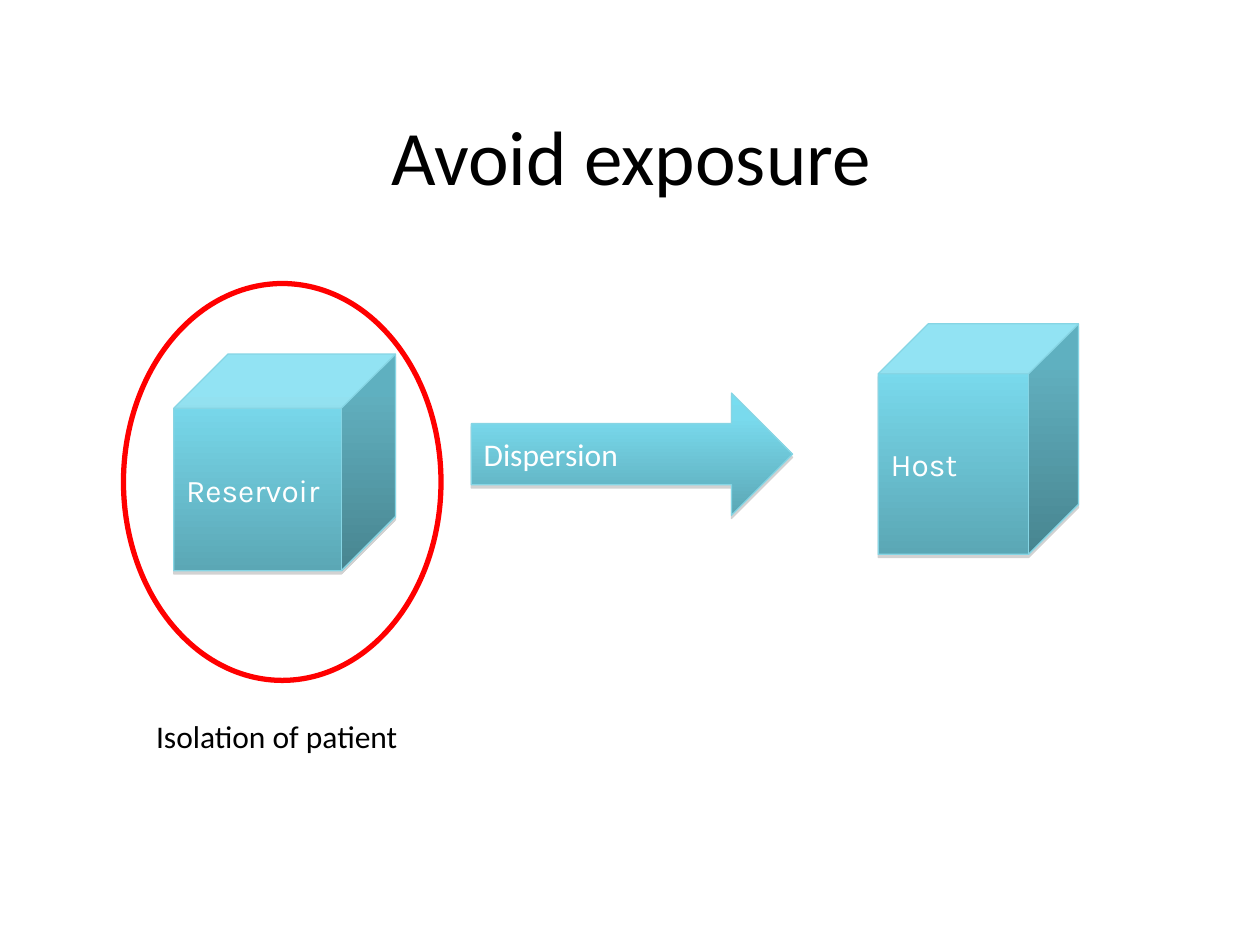
from copy import deepcopy

from lxml import etree
from pptx import Presentation
from pptx.dml.color import RGBColor
from pptx.enum import shapes, text
from pptx.oxml.ns import qn
from pptx.util import Inches, Pt

BLACK = RGBColor(0x00, 0x00, 0x00)
WHITE = RGBColor(0xFF, 0xFF, 0xFF)
RED = RGBColor(0xFF, 0x00, 0x00)
EDGE = RGBColor(0x86, 0xD5, 0xE4)
STOPS = [
    (0, RGBColor(0x77, 0xDD, 0xF0)),
    (0.2, RGBColor(0x79, 0xDA, 0xED)),
    (1, RGBColor(0x5B, 0xA7, 0xB5)),
]
SHAPE = shapes.MSO_SHAPE


def write(sp, words, size, color, font="Calibri", align=text.PP_ALIGN.LEFT,
          anchor=text.MSO_ANCHOR.MIDDLE):
    tf = sp.text_frame
    tf.word_wrap = True
    tf.vertical_anchor = anchor
    p = tf.paragraphs[0]
    p.alignment = align
    r = p.add_run()
    r.text = words
    r.font.size = Pt(size)
    r.font.name = font
    r.font.color.rgb = color


def style_block(sp):
    """Apply the top-to-bottom gradient, thin edge and short drop shadow."""
    sp.fill.gradient()
    sp.fill.gradient_angle = 270
    first = sp._element.spPr.find(".//" + qn("a:gs"))
    first.addnext(deepcopy(first))
    for stop, (position, color) in zip(sp.fill.gradient_stops, STOPS):
        stop.position = position
        stop.color.rgb = color
    sp.line.color.rgb = EDGE
    sp.line.width = Pt(0.75)
    sp.shadow.inherit = False
    effects = sp._element.spPr.find(qn("a:effectLst"))
    shadow = etree.SubElement(effects, qn("a:outerShdw"), blurRad="0",
                              dist=str(Pt(1.8)), dir="5400000", rotWithShape="0")
    tint = etree.SubElement(shadow, qn("a:srgbClr"), val="808080")
    etree.SubElement(tint, qn("a:alpha"), val="35000")


prs = Presentation()
prs.slide_width, prs.slide_height = Inches(10), Inches(7.5)
s = prs.slides.add_slide(prs.slide_layouts[6])

title = s.shapes.add_textbox(Inches(0.51), Inches(0.6), Inches(9), Inches(1.25))
write(title, "Avoid exposure", 44, BLACK, align=text.PP_ALIGN.CENTER)

caption = s.shapes.add_textbox(Inches(1.14), Inches(5.64), Inches(2.89), Inches(0.4))
write(caption, "Isolation of patient", 18, BLACK, anchor=text.MSO_ANCHOR.TOP)

ring = s.shapes.add_shape(SHAPE.OVAL, Inches(0.98), Inches(2.25), Inches(2.52), Inches(3.15))
ring.shadow.inherit = False
ring.fill.background()
ring.line.color.rgb = RED
ring.line.width = Pt(3)

blocks = [
    (SHAPE.CUBE, "Reservoir", "Karla", (1.38, 2.81, 1.76, 1.72)),
    (SHAPE.CUBE, "Host", "Karla", (6.97, 2.57, 1.59, 1.83)),
    (SHAPE.RIGHT_ARROW, "Dispersion", "Calibri", (3.74, 3.12, 2.55, 0.97)),
]
for kind, label, font, box in blocks:
    sp = s.shapes.add_shape(kind, *map(Inches, box))
    style_block(sp)
    write(sp, label, 18, WHITE, font)

prs.save("out.pptx")
